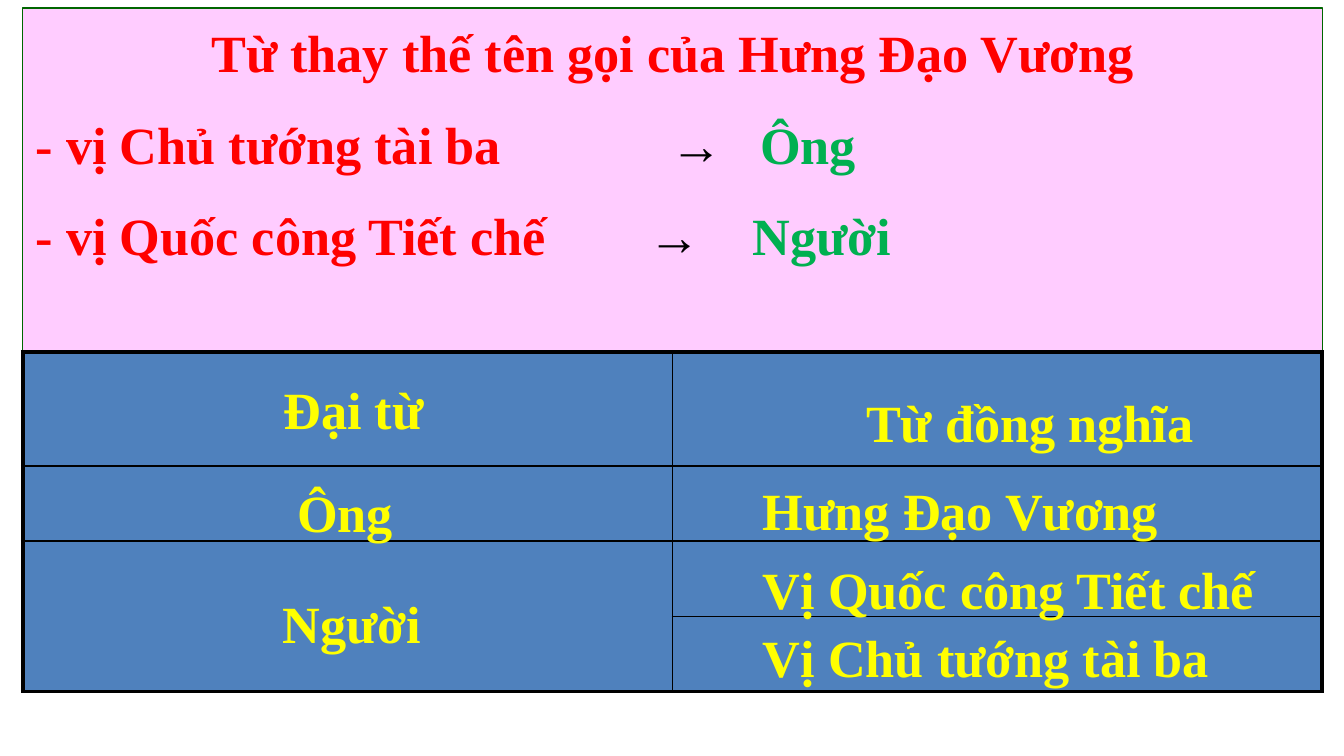
from dataclasses import dataclass

from lxml import etree
from pptx import Presentation
from pptx import util as u
from pptx.dml.color import RGBColor
from pptx.enum import shapes, text
from pptx.oxml import ns

Cm, Pt = u.Cm, u.Pt
AL = text.PP_ALIGN


@dataclass(frozen=True)
class Theme:
    font: str = "Times New Roman"
    size: float = 28
    gap: float = 15.5
    panel: str = "FFCCFF"
    panel_line: str = "006600"
    cell: str = "4F81BD"
    border: str = "000000"
    heading: str = "FF0000"
    answer: str = "00B050"
    label: str = "FFFF00"
    outer: float = 2.25
    inner: float = 1


@dataclass(frozen=True)
class Label:
    words: str
    left: float
    top: float
    width: float
    align: AL = AL.LEFT
    indent: float = 0.25


@dataclass(frozen=True)
class Replacement:
    phrase: str
    answer: str
    tabs: tuple[float, float]


T = Theme()
LEFT, WIDTH = 0.43, 24.56
ROWS = (2.16, 1.42, 1.42, 1.42)

REPLACEMENTS = (
    Replacement("- vị Chủ tướng tài ba", "Ông", (11.99, 13.69)),
    Replacement("- vị Quốc công Tiết chế", "Người", (11.58, 13.54)),
)
LABELS = (
    Label("Đại từ", 3.38, 6.91, 6.6, AL.CENTER),
    Label("Từ đồng nghĩa", 15.42, 7.14, 8.08, AL.CENTER),
    Label("Ông", 3.18, 8.84, 5.41, indent=2.44),
    Label("Người", 2.92, 10.95, 6.6, AL.CENTER, 1.12),
    Label("Hưng Đạo Vương", 14.17, 8.81, 8.41),
    Label("Vị Quốc công Tiết chế", 14.17, 10.31, 10.46),
    Label("Vị Chủ tướng tài ba", 14.17, 11.58, 9.75),
)


def rgb(value: str) -> RGBColor:
    return RGBColor.from_string(value)


def set_frame(tf, indent: float = 0.25) -> None:
    formats = {
        "word_wrap": True,
        "auto_size": text.MSO_AUTO_SIZE.NONE,
        "vertical_anchor": text.MSO_ANCHOR.TOP,
        "margin_left": Cm(indent),
        "margin_right": Cm(0.25),
        "margin_top": Cm(0.23),
        "margin_bottom": Cm(0),
    }
    for name, value in formats.items():
        setattr(tf, name, value)


def add_run(p, words: str, color: str) -> None:
    r = p.add_run()
    r.text = words
    for name, value in {"name": T.font, "size": Pt(T.size), "bold": True}.items():
        setattr(r.font, name, value)
    r.font.color.rgb = rgb(color)


def add_tabs(p, stops: tuple[float, ...]) -> None:
    tabs = etree.SubElement(p._p.get_or_add_pPr(), ns.qn("a:tabLst"))
    for stop in stops:
        etree.SubElement(tabs, ns.qn("a:tab"), pos=str(int(Cm(stop))), algn="l")


def add_panel(s) -> None:
    sp = s.shapes.add_shape(
        shapes.MSO_SHAPE.RECTANGLE, Cm(LEFT), Cm(0.15), Cm(WIDTH), Cm(6.83))
    sp.shadow.inherit = False
    sp.fill.solid()
    sp.fill.fore_color.rgb = rgb(T.panel)
    sp.line.color.rgb = rgb(T.panel_line)
    sp.line.width = Pt(0.75)
    tf = sp.text_frame
    set_frame(tf)
    p = tf.paragraphs[0]
    p.alignment = AL.CENTER
    add_run(p, "Từ thay thế tên gọi của Hưng Đạo Vương", T.heading)
    for item in REPLACEMENTS:
        p = tf.add_paragraph()
        p.alignment = AL.JUSTIFY
        p.space_before = Pt(T.gap)
        add_tabs(p, item.tabs)
        add_run(p, item.phrase + "\t", T.heading)
        add_run(p, "→\t", T.border)
        add_run(p, item.answer, T.answer)


def set_borders(cell, widths: dict[str, float]) -> None:
    pr = cell._tc.get_or_add_tcPr()
    for i, (side, width) in enumerate(widths.items()):
        ln = etree.Element(ns.qn("a:ln" + side), w=str(int(Pt(width))))
        fill = etree.SubElement(ln, ns.qn("a:solidFill"))
        etree.SubElement(fill, ns.qn("a:srgbClr"), val=T.border)
        pr.insert(i, ln)


def add_grid(s) -> None:
    table = s.shapes.add_table(
        len(ROWS), 2, Cm(LEFT), Cm(6.65), Cm(WIDTH), Cm(sum(ROWS))).table
    for col in table.columns:
        col.width = Cm(WIDTH / 2)
    for row, height in zip(table.rows, ROWS):
        row.height = Cm(height)
    table.cell(2, 0).merge(table.cell(3, 0))
    for i in range(len(ROWS)):
        for j in range(2):
            cell = table.cell(i, j)
            cell.fill.solid()
            cell.fill.fore_color.rgb = rgb(T.cell)
            last = i + (cell.span_height if cell.is_merge_origin else 1)
            on_edge = {"L": j == 0, "R": j == 1, "T": i == 0, "B": last == len(ROWS)}
            set_borders(cell, {side: T.outer if edge else T.inner
                               for side, edge in on_edge.items()})


def add_label(s, label: Label) -> None:
    sp = s.shapes.add_textbox(
        Cm(label.left), Cm(label.top), Cm(label.width), Cm(1.45))
    set_frame(sp.text_frame, label.indent)
    p = sp.text_frame.paragraphs[0]
    p.alignment = label.align
    add_run(p, label.words, T.label)


def main() -> None:
    prs = Presentation()
    prs.slide_width, prs.slide_height = Cm(25.4), Cm(14.29)
    s = prs.slides.add_slide(prs.slide_layouts[6])

    # Replacement words, then the table and the words over it
    add_panel(s)
    add_grid(s)
    for label in LABELS:
        add_label(s, label)

    prs.save("out.pptx")


if __name__ == "__main__":
    main()
